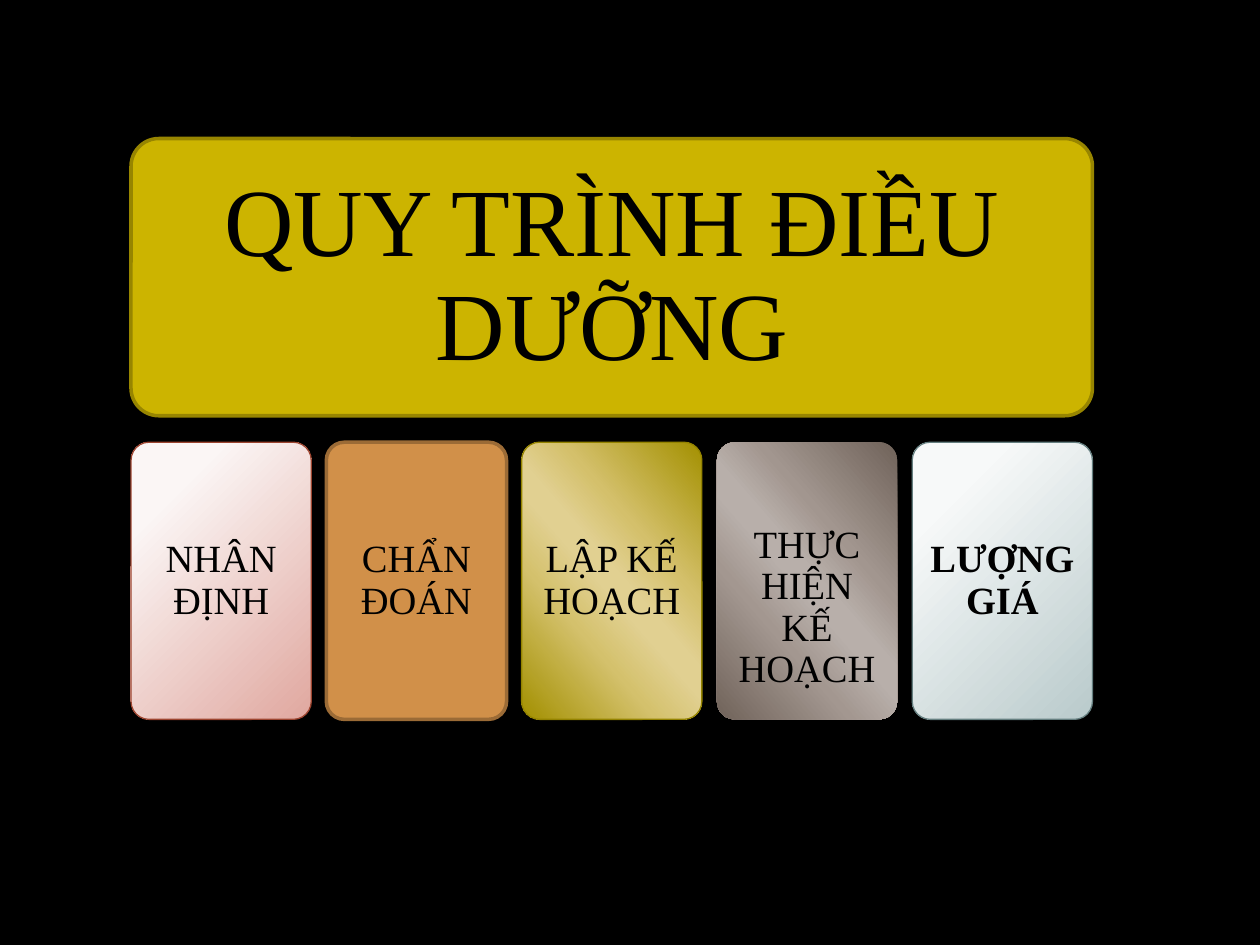
from lxml import etree
from pptx import Presentation
from pptx.dml.color import RGBColor
from pptx.enum import shapes, text
from pptx.oxml import ns
from pptx.util import Pt

FONT = "Times New Roman"
LEFT, BANNER_TOP, BANNER_WIDTH = 74.9, 79.2, 549.4
CARD_TOP, CARD_WIDTH, CARD_PITCH = 252.7, 103, 111.6
HEIGHT = 158.4
TEXT_INSET = 6.5

ROSE = [(20, "FBF6F5"), (100, "E0A79F")]
GOLD = [(0, "A39000"), (33, "D4C06B"), (47, "E1D091"),
        (53, "E1D091"), (68, "D4C16C"), (100, "A39000")]
TAUPE = [(0, "70635A"), (33, "A2968F"), (47, "B8AFAA"),
         (53, "B8AFAA"), (68, "A39790"), (100, "70635A")]
MIST = [(20, "F7F9F9"), (100, "B9CACB")]

# label, fill, outline colour, outline width, bold, extra space above the text
STEPS = [
    ("NHÂN ĐỊNH", ROSE, "9D4530", 0.75, False, 0),
    ("CHẨN ĐOÁN", "D19049", "9B6B36", 2, False, 0),
    ("LẬP KẾ HOẠCH", GOLD, "948300", 0.75, False, 0),
    ("THỰC HIỆN KẾ HOẠCH", TAUPE, None, 0, False, 31),
    ("LƯỢNG GIÁ", MIST, "657F80", 0.75, True, 0),
]


def rgb(value):
    return RGBColor.from_string(value)


def fill_gradient(shape, stops):
    """Two stops radiate from the top left corner; more run along a diagonal."""
    shape.fill.background()
    placeholder_fill = shape._element.spPr.find(ns.qn("a:noFill"))
    gradient = etree.Element(ns.qn("a:gradFill"), rotWithShape="1")
    stop_list = etree.SubElement(gradient, ns.qn("a:gsLst"))
    for position, colour in stops:
        stop = etree.SubElement(stop_list, ns.qn("a:gs"), pos=str(position * 1000))
        etree.SubElement(stop, ns.qn("a:srgbClr"), val=colour)
    if len(stops) == 2:
        radial = etree.SubElement(gradient, ns.qn("a:path"), path="circle")
        etree.SubElement(radial, ns.qn("a:fillToRect"),
                         l="-15000", t="-15000", r="115000", b="115000")
    else:
        etree.SubElement(gradient, ns.qn("a:lin"), ang=str(139 * 60000), scaled="0")
    placeholder_fill.getparent().replace(placeholder_fill, gradient)


def add_panel(slide, left, top, width, fill, outline, outline_width):
    panel = slide.shapes.add_shape(shapes.MSO_SHAPE.ROUNDED_RECTANGLE,
                                   Pt(left), Pt(top), Pt(width), Pt(HEIGHT))
    panel.adjustments[0] = 0.1
    panel.shadow.inherit = False
    if isinstance(fill, str):
        panel.fill.solid()
        panel.fill.fore_color.rgb = rgb(fill)
    else:
        fill_gradient(panel, fill)
    if outline:
        panel.line.color.rgb = rgb(outline)
        panel.line.width = Pt(outline_width)
    else:
        panel.line.fill.background()
    return panel


def write_label(shape, label, size, inset, bold=False, space_above=0):
    frame = shape.text_frame
    frame.text = label
    frame.word_wrap = True
    frame.auto_size = text.MSO_AUTO_SIZE.NONE
    frame.vertical_anchor = text.MSO_ANCHOR.MIDDLE
    frame.margin_left = frame.margin_right = frame.margin_bottom = Pt(inset)
    frame.margin_top = Pt(inset + space_above)
    paragraph = frame.paragraphs[0]
    paragraph.alignment = text.PP_ALIGN.CENTER
    paragraph.line_spacing = 0.9
    paragraph.font.name = FONT
    paragraph.font.size = Pt(size)
    paragraph.font.bold = bold
    paragraph.font.color.rgb = rgb("000000")


def add_heading(slide):
    add_panel(slide, LEFT, BANNER_TOP, BANNER_WIDTH, "CCB400", "978500", 2)
    title = slide.shapes.title
    title.left, title.top = Pt(LEFT + 4.5), Pt(BANNER_TOP + 4.5)
    title.width, title.height = Pt(BANNER_WIDTH - 9), Pt(HEIGHT - 9)
    write_label(title, "QUY TRÌNH ĐIỀU DƯỠNG", 55, 16.5)
    # Bring the heading in front of its banner.
    slide.shapes._spTree.append(title._element)


def add_steps(slide):
    for index, (label, fill, outline, weight, bold, space_above) in enumerate(STEPS):
        card = add_panel(slide, LEFT + index * CARD_PITCH, CARD_TOP, CARD_WIDTH,
                         fill, outline, weight)
        write_label(card, label, 22, TEXT_INSET, bold, space_above)


def main():
    deck = Presentation()
    deck.slide_width, deck.slide_height = Pt(720), Pt(540)
    slide = deck.slides.add_slide(deck.slide_layouts.get_by_name("Title Only"))
    slide.background.fill.solid()
    slide.background.fill.fore_color.rgb = rgb("000000")
    add_heading(slide)
    add_steps(slide)
    deck.save("out.pptx")


if __name__ == "__main__":
    main()
